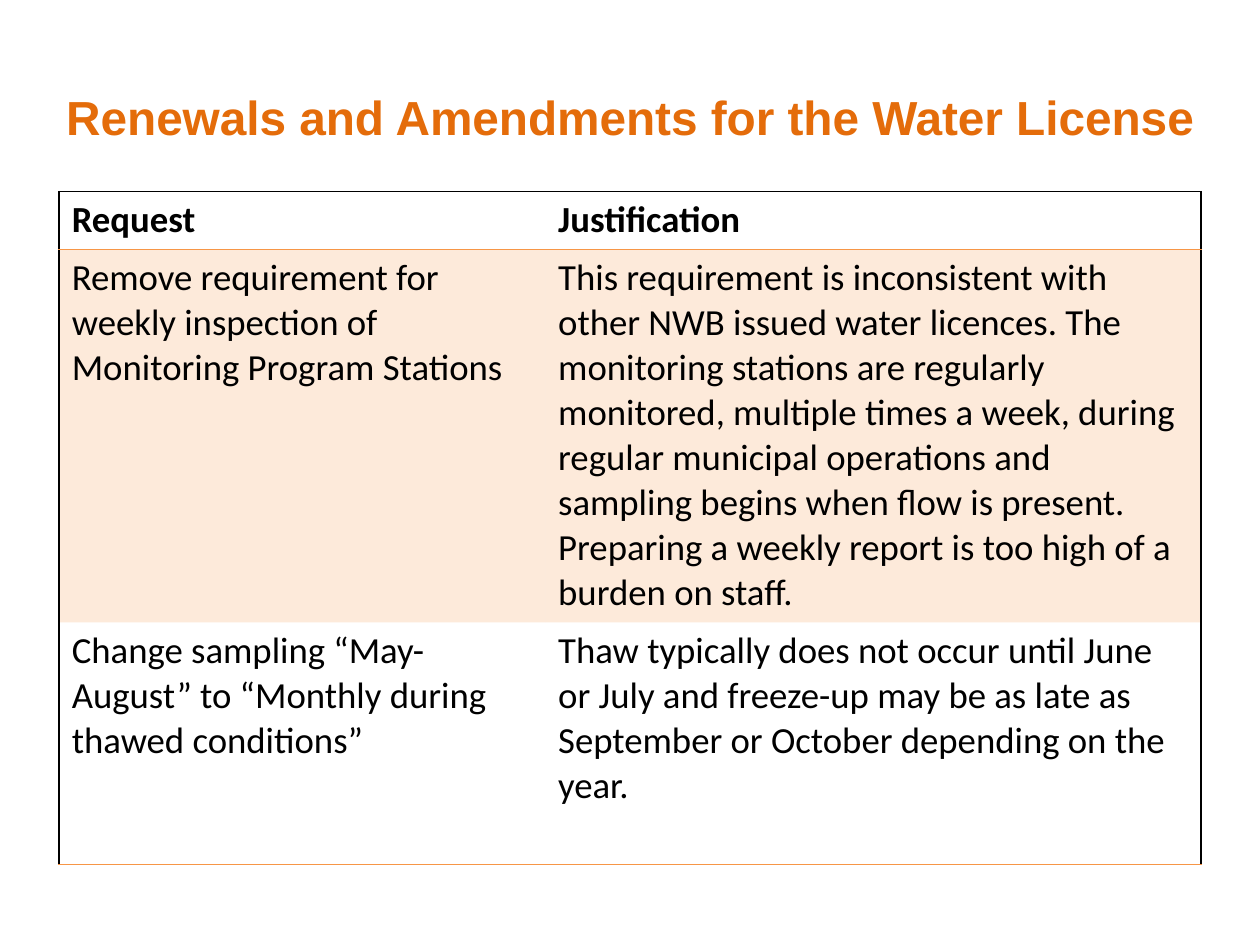
from dataclasses import dataclass

import lxml.etree
import pptx
import pptx.dml.color
import pptx.enum.text
import pptx.oxml.ns
import pptx.util

Inches = pptx.util.Inches
qualified = pptx.oxml.ns.qn


@dataclass(frozen=True)
class Theme:
    title_font: str = "Arial"
    body_font: str = "Calibri"
    title_size: float = 27.3
    body_size: float = 21
    title_color: str = "E46C0A"
    text_color: str = "000000"
    frame_color: str = "000000"
    accent_color: str = "F79646"
    band_opacity: int = 20
    border_width: float = 1


def write_text(text_frame, text, *, font, size, color, bold=False, alignment=None):
    text_frame.word_wrap = True
    paragraph = text_frame.paragraphs[0]
    paragraph.alignment = alignment
    run = paragraph.add_run()
    run.text = text
    run.font.name = font
    run.font.size = pptx.util.Pt(size)
    run.font.bold = bold
    run.font.color.rgb = pptx.dml.color.RGBColor.from_string(color)


def set_borders(cell, width, **colors):
    """Draw the named edges (L, R, T, B) and hide the others."""
    properties = cell._tc.get_or_add_tcPr()
    for edge in "LRTB":
        line = lxml.etree.SubElement(properties, qualified(f"a:ln{edge}"))
        line.set("w", str(pptx.util.Pt(width)))
        color = colors.get(edge)
        if color:
            fill = lxml.etree.SubElement(line, qualified("a:solidFill"))
            lxml.etree.SubElement(fill, qualified("a:srgbClr"), val=color)
        else:
            lxml.etree.SubElement(line, qualified("a:noFill"))


class SlideBuilder:
    """Holds the theme and the slide being built."""

    def __init__(self, slide, theme):
        self.slide = slide
        self.theme = theme

    def add_title(self, text, left, top, width, height):
        title = self.slide.shapes.title
        title.left, title.top = Inches(left), Inches(top)
        title.width, title.height = Inches(width), Inches(height)
        frame = title.text_frame
        frame.auto_size = pptx.enum.text.MSO_AUTO_SIZE.NONE
        frame.vertical_anchor = pptx.enum.text.MSO_ANCHOR.MIDDLE
        write_text(frame, text, font=self.theme.title_font, size=self.theme.title_size,
                   color=self.theme.title_color, bold=True,
                   alignment=pptx.enum.text.PP_ALIGN.CENTER)

    def add_table(self, rows, left, top, column_widths, row_heights):
        table = self.slide.shapes.add_table(
            len(rows), len(column_widths), Inches(left), Inches(top),
            Inches(sum(column_widths)), Inches(sum(row_heights))).table
        table.first_row = table.horz_banding = False
        for column, width in zip(table.columns, column_widths):
            column.width = Inches(width)
        for row, height in zip(table.rows, row_heights):
            row.height = Inches(height)
        for row_index, texts in enumerate(rows):
            for column_index, text in enumerate(texts):
                self.format_cell(table, row_index, column_index, text)

    def format_cell(self, table, row_index, column_index, text):
        theme = self.theme
        cell = table.cell(row_index, column_index)
        is_header = row_index == 0
        write_text(cell.text_frame, text, font=theme.body_font, size=theme.body_size,
                   color=theme.text_color, bold=is_header)
        colors = {}
        if column_index == 0:
            colors["L"] = theme.frame_color
        if column_index == len(table.columns) - 1:
            colors["R"] = theme.frame_color
        if is_header:
            colors["T"] = theme.frame_color
        if row_index == 1:
            colors["T"] = theme.accent_color
        if is_header or row_index == len(table.rows) - 1:
            colors["B"] = theme.accent_color
        set_borders(cell, theme.border_width, **colors)
        if row_index % 2:
            self.fill_band(cell)
        else:
            cell.fill.background()

    def fill_band(self, cell):
        cell.fill.solid()
        cell.fill.fore_color.rgb = pptx.dml.color.RGBColor.from_string(self.theme.accent_color)
        color = cell._tc.tcPr.find(qualified("a:solidFill")).find(qualified("a:srgbClr"))
        lxml.etree.SubElement(color, qualified("a:alpha"),
                              val=str(self.theme.band_opacity * 1000))


REQUESTS = [
    ("Request", "Justification"),
    ("Remove requirement for weekly inspection of Monitoring Program Stations",
     "This requirement is inconsistent with other NWB issued water licences. "
     "The monitoring stations are regularly monitored, multiple times a week, "
     "during regular municipal operations and sampling begins when flow is present. "
     "Preparing a weekly report is too high of a burden on staff."),
    ("Change sampling “May-August” to “Monthly during thawed conditions”",
     "Thaw typically does not occur until June or July and freeze-up may be as late "
     "as September or October depending on the year."),
]


def main():
    presentation = pptx.Presentation()
    presentation.slide_width = Inches(10)
    presentation.slide_height = Inches(7.5)
    title_only = presentation.slide_layouts.get_by_name("Title Only")
    builder = SlideBuilder(presentation.slides.add_slide(title_only), Theme())
    builder.add_title("Renewals and Amendments for the Water License", 0, 0.3, 10, 1.25)
    builder.add_table(REQUESTS, 0.47, 1.52, column_widths=[3.86, 5.2],
                      row_heights=[0.46, 2.96, 1.92])
    presentation.save("out.pptx")


if __name__ == "__main__":
    main()
